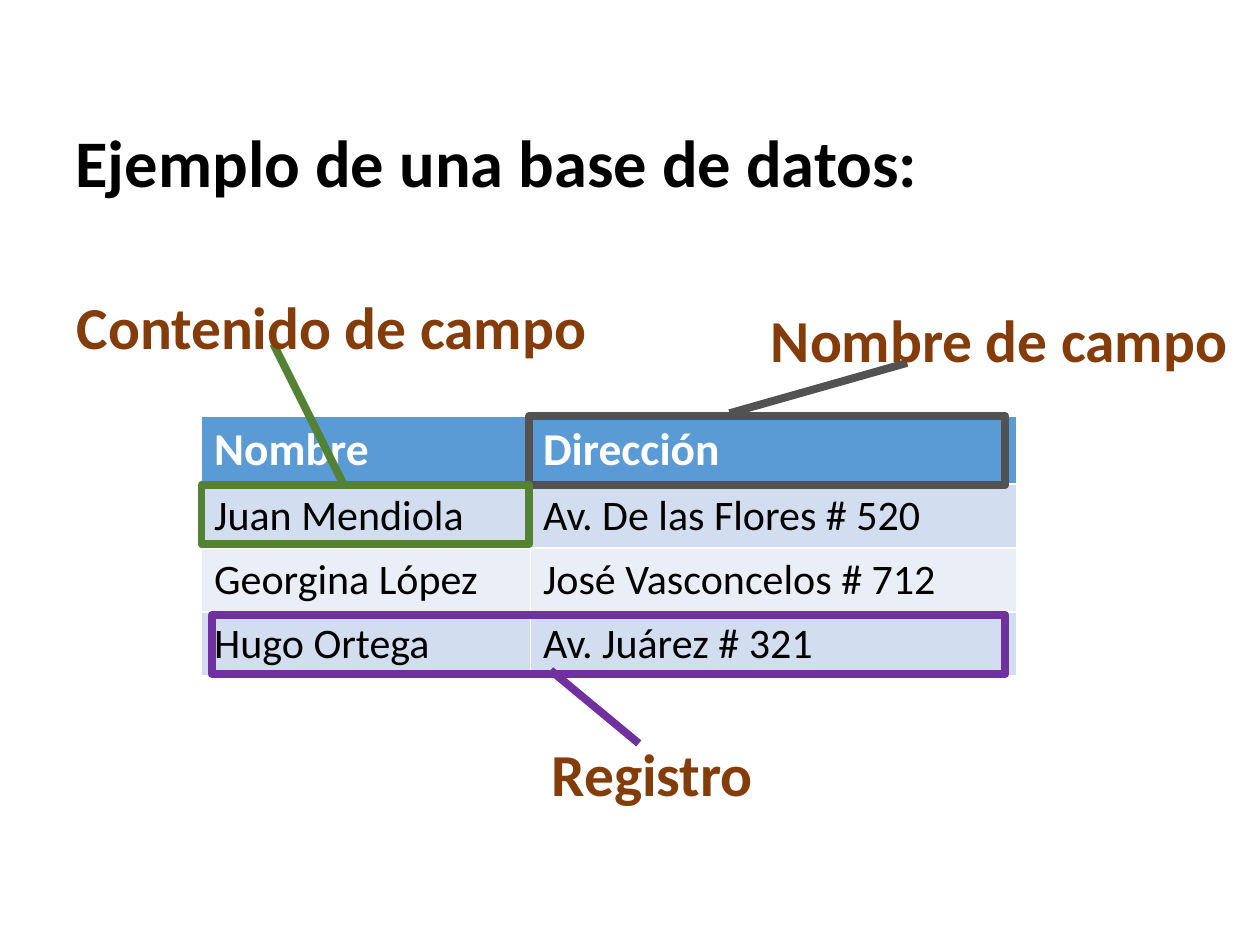
"""Build a slide that names the parts of a small database table."""
from lxml.etree import SubElement
from pptx import Presentation
from pptx.dml.color import RGBColor
from pptx.enum.shapes import MSO_CONNECTOR, MSO_SHAPE
from pptx.enum.text import MSO_ANCHOR, MSO_AUTO_SIZE, PP_ALIGN
from pptx.oxml.ns import qn
from pptx.util import Inches, Pt

COLORS = {
    "black": "000000", "white": "FFFFFF", "brown": "843C0B",
    "header": "5B9BD5", "band_dark": "D2DEEF", "band_light": "EAEFF7",
    "field_name": "525252", "field_content": "548235", "record": "7030A0",
}


def color(name):
    return RGBColor.from_string(COLORS[name])


def write(frame, text, size, ink, bold):
    frame.text = text
    font = frame.paragraphs[0].runs[0].font
    values = {"name": "Calibri", "size": Pt(size), "bold": bold}
    for attribute, value in values.items():
        setattr(font, attribute, value)
    font.color.rgb = color(ink)


prs = Presentation()
prs.slide_width, prs.slide_height = Inches(10), Inches(7.5)
slide = prs.slides.add_slide(prs.slide_layouts[5])

title = slide.shapes.title
title.left, title.top = Inches(0.5), Inches(0.69)
title.width, title.height = Inches(9), Inches(1.25)
write(title.text_frame, "Ejemplo de una base de datos:", 38, "black", True)
title.text_frame.vertical_anchor = MSO_ANCHOR.MIDDLE
heading = title.text_frame.paragraphs[0]
heading.alignment, heading.line_spacing = PP_ALIGN.LEFT, 0.9

records = [
    ("Nombre", "Dirección"),
    ("Juan Mendiola", "Av. De las Flores # 520"),
    ("Georgina López", "José Vasconcelos # 712"),
    ("Hugo Ortega", "Av. Juárez # 321"),
]
row_fills = ["header", "band_dark", "band_light", "band_dark"]
database = slide.shapes.add_table(
    len(records), 2, Inches(1.6), Inches(3.3), Inches(6.47), Inches(2.03)).table
for column, width in zip(database.columns, (2.61, 3.86)):
    column.width = Inches(width)
for row, (record, fill) in enumerate(zip(records, row_fills)):
    is_header = row == 0
    database.rows[row].height = Inches(0.53 if is_header else 0.5)
    for col, text in enumerate(record):
        cell = database.cell(row, col)
        cell.fill.solid()
        cell.fill.fore_color.rgb = color(fill)
        write(cell.text_frame, text, 26 if is_header else 24,
              "white" if is_header else "black", is_header)

callouts = [
    ("Nombre de campo", (6.02, 2.36, 3.86, 0.67), "field_name",
     (4.2, 3.3, 3.78, 0.55), (5.79, 3.28, 7.2, 2.88)),
    ("Contenido de campo", (0.51, 2.25, 4.29, 0.67), "field_content",
     (1.6, 3.85, 2.6, 0.47), (2.72, 3.83, 2.17, 2.73)),
    ("Registro", (4.28, 5.8, 1.82, 0.67), "record",
     (1.68, 4.88, 6.3, 0.47), (4.37, 5.32, 5.07, 5.9)),
]
for text, label_box, hue, frame_box, pointer_ends in callouts:
    highlight = slide.shapes.add_shape(MSO_SHAPE.RECTANGLE, *map(Inches, frame_box))
    highlight.shadow.inherit = False
    highlight.fill.background()
    pointer = slide.shapes.add_connector(
        MSO_CONNECTOR.STRAIGHT, *map(Inches, pointer_ends))
    SubElement(pointer._element.spPr, qn("a:effectLst"))
    for outline in (highlight.line, pointer.line):
        outline.color.rgb = color(hue)
        outline.width = Pt(4.5)

    label = slide.shapes.add_textbox(*map(Inches, label_box)).text_frame
    write(label, text, 34, "brown", True)
    label.word_wrap = False
    label.auto_size = MSO_AUTO_SIZE.SHAPE_TO_FIT_TEXT

prs.save("out.pptx")
